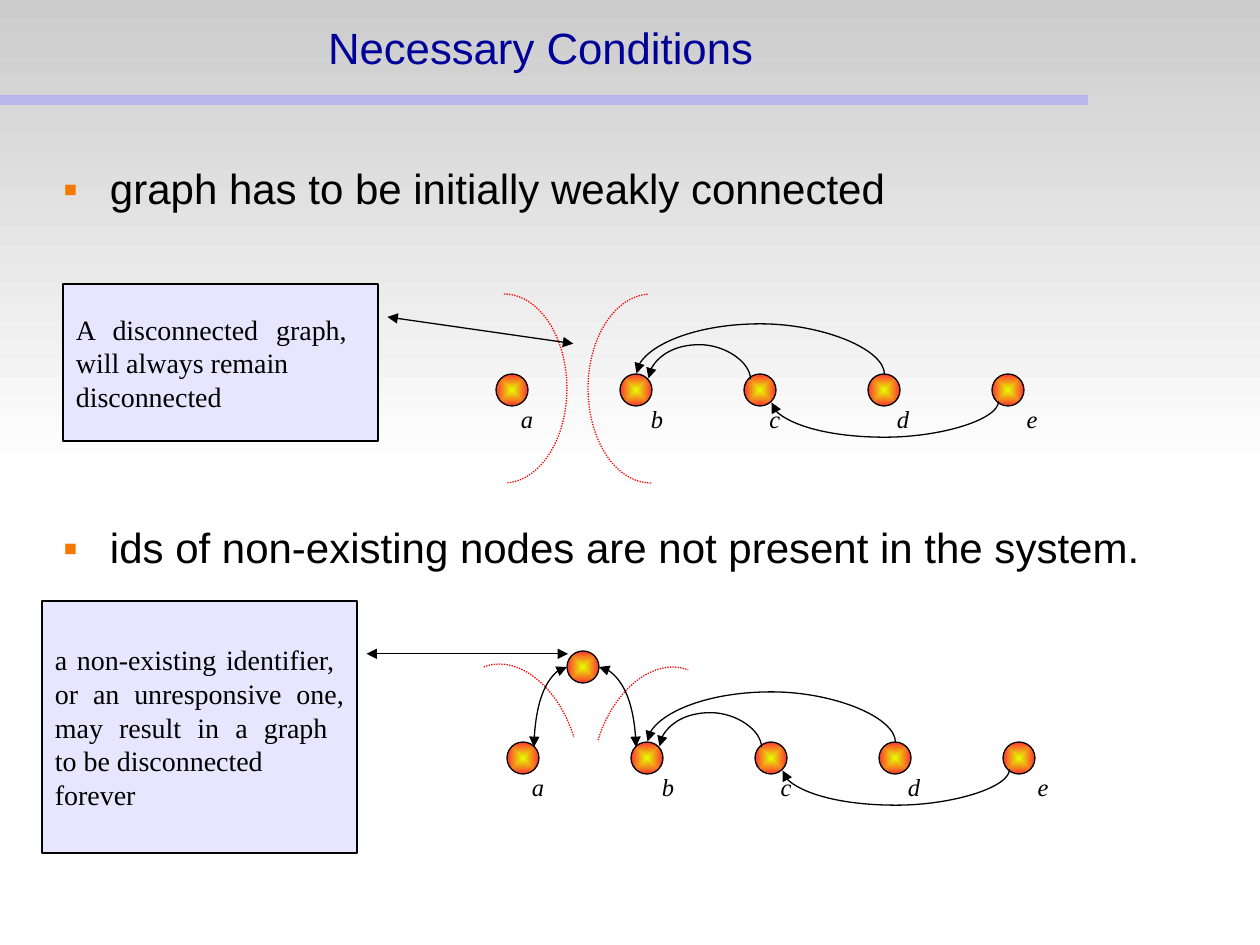
from dataclasses import dataclass

from lxml import etree
from pptx import Presentation
from pptx.dml.color import RGBColor
from pptx.enum.dml import MSO_LINE
from pptx.enum.shapes import MSO_CONNECTOR, MSO_SHAPE
from pptx.enum.text import MSO_ANCHOR, MSO_AUTO_SIZE, PP_ALIGN
from pptx.oxml.ns import qn
from pptx.util import Pt

RECT, OVAL, ARC, CALL = (MSO_SHAPE.RECTANGLE, MSO_SHAPE.OVAL, MSO_SHAPE.ARC,
                         MSO_SHAPE.LINE_CALLOUT_1)
CURVE, DOTS = MSO_CONNECTOR.CURVE, MSO_LINE.ROUND_DOT
MID, TOP = MSO_ANCHOR.MIDDLE, MSO_ANCHOR.TOP
LEFT, CENTER, FULL = PP_ALIGN.LEFT, PP_ALIGN.CENTER, PP_ALIGN.JUSTIFY
FIXED = MSO_AUTO_SIZE.NONE
SCALE = 914400 / 126
STEP, SIZE = 124, 32
HEX = {"ink": "000000", "title": "000099", "mark": "F57900", "bar": "9999FF",
       "note": "E6E6FF", "cut": "FF0000", "core": "E6FF00", "rim": "FF3333",
       "sky": "CCCCCC", "white": "FFFFFF"}
HEAD = {"name": "Arial", "size": Pt(25), "bold": False}
BODY = {"name": "Arial", "size": Pt(24)}
NOTE = {"name": "Times New Roman", "size": Pt(16)}
TAG = {"name": "Times New Roman", "size": Pt(14), "italic": True}


@dataclass
class Label:
    text: str
    shift: int


@dataclass
class Arch:
    start: int
    end: int
    rise: int
    bulge: int
    up: bool


@dataclass
class Cut:
    x: int
    y: int
    turn: float
    span: tuple[float, float]


@dataclass
class Note:
    box: tuple[int, int, int, int]
    tip: tuple[float, float, float, float]
    lines: list[str]


LABELS = [Label("a", 15), Label("b", 21), Label("c", 15), Label("d", 19), Label("e", 24)]
ARCHES = [Arch(486, 259, 12, 36, False), Arch(372, 124, -16, 51, True),
          Arch(238, 136, -11, 35, True)]
ROWS = [(512, 390), (523, 758)]
CUTS = [Cut(441, 294, 0, (162, 53.17)), Cut(588, 294, 180, (162, 53.17)),
        Cut(451, 662, 343.5, (160.73, 215.21)), Cut(595, 665, 16.5, (108.79, 163.27))]
NOTES = [
    Note((63, 284, 315, 157), (0.21, 1.03, 0.38, 1.62),
         ["A disconnected graph, \vwill always remain ", "disconnected"]),
    Note((42, 601, 315, 252), (0.21, 1.03, 0.21, 1.67),
         ["a non-existing identifier, \vor an unresponsive one,\v"
          "may result in a graph \vto be disconnected ", "forever"]),
]
POINTS = ["graph has to be initially weakly connected",
          "ids of non-existing nodes are not present in the system."]


def px(*vals: float) -> list[int]:
    return [round(val * SCALE) for val in vals]


def rgb(name: str) -> RGBColor:
    return RGBColor.from_string(HEX[name])


def sub(node, tag: str, **vals):
    return etree.SubElement(node, qn(tag), {key: str(val) for key, val in vals.items()})


def put(item, vals: dict) -> None:
    for key, val in vals.items():
        setattr(item, key, val)


def write(shape, lines: list[str], look: dict, tone: str, align, anchor, pad: tuple,
          wrap: bool) -> list:
    frame = shape.text_frame
    side, edge = px(*pad)
    put(frame, {"margin_left": side, "margin_right": side, "margin_top": edge,
                "margin_bottom": edge, "word_wrap": wrap, "vertical_anchor": anchor,
                "auto_size": FIXED})
    frame.text = lines[0]
    for line in lines[1:]:
        frame.add_paragraph().text = line
    for para in frame.paragraphs:
        para.alignment = align
        for run in para.runs:
            put(run.font, look)
            run.font.color.rgb = rgb(tone)
    return list(frame.paragraphs)


def stroke(shape, tone: str, ends: tuple = ()) -> None:
    shape.line.color.rgb = rgb(tone)
    shape.line.width = Pt(0.75)
    line = shape._element.spPr.find(qn("a:ln"))
    for tag in ends:
        sub(line, tag, type="triangle")


def draw(slide, kind, box: tuple, fill: str = ""):
    shape = slide.shapes.add_shape(kind, *px(*box))
    shape.shadow.inherit = False
    if fill:
        shape.fill.solid()
        shape.fill.fore_color.rgb = rgb(fill)
    else:
        shape.fill.background()
    return shape


def blend(shape, first: str, last: str) -> None:
    shape.fill.gradient()
    for stop, tone in zip(shape.fill.gradient_stops, (first, last)):
        stop.color.rgb = rgb(tone)
    shape.fill.gradient_angle = 270


def dot(slide, x: int, y: int) -> None:
    shape = draw(slide, OVAL, (x - SIZE // 2, y - SIZE // 2, SIZE, SIZE))
    blend(shape, "core", "rim")
    grad = shape._element.spPr.find(qn("a:gradFill"))
    grad.remove(grad.find(qn("a:lin")))
    way = sub(grad, "a:path", path="shape")
    sub(way, "a:fillToRect", l=50000, t=50000, r=50000, b=50000)
    stroke(shape, "ink")


def bend(slide, ends: tuple, heads: tuple):
    wire = slide.shapes.add_connector(CURVE, *px(*ends))
    stroke(wire, "ink", heads)
    sub(wire._element.spPr, "a:effectLst")
    return wire._element.spPr


def arch(slide, x: int, y: int, item: Arch) -> None:
    mid, half = x + (item.start + item.end) / 2, (item.start - item.end) / 2
    base = y + item.rise
    props = bend(slide, (mid, base - half, mid + 1, base + half), ("a:tailEnd",))
    props.xfrm.set("rot", str((270 if item.up else 90) * 60000))
    if item.up:
        props.xfrm.set("flipV", "1")
    rule = props.find(qn("a:prstGeom")).get_or_add_avLst()
    sub(rule, "a:gd", name="adj1", fmla=f"val {item.bulge * 100000}")


def graph(slide, x: int, y: int) -> None:
    for col, label in enumerate(LABELS):
        mid = x + col * STEP
        box = slide.shapes.add_textbox(*px(mid + label.shift - 19, y + 8, 38, 43))
        write(box, [label.text], TAG, "ink", CENTER, TOP, (13, 6), False)
        dot(slide, mid, y)
    for item in ARCHES:
        arch(slide, x, y, item)


def cut(slide, item: Cut) -> None:
    shape = draw(slide, ARC, (item.x, item.y, 126, 189))
    shape.rotation = item.turn
    shape.adjustments[0], shape.adjustments[1] = item.span
    stroke(shape, "cut")
    shape.line.dash_style = DOTS


def note(slide, item: Note) -> None:
    shape = draw(slide, CALL, item.box, "note")
    for spot, val in enumerate(item.tip):
        shape.adjustments[spot] = val
    stroke(shape, "ink", ("a:headEnd", "a:tailEnd"))
    write(shape, item.lines, NOTE, "ink", FULL, MID, (13, 6), False)


def place(shape, box: tuple) -> None:
    put(shape, dict(zip(("left", "top", "width", "height"), px(*box))))


def back(slide) -> None:
    sky = draw(slide, RECT, (0, 0, 1260, 472))
    blend(sky, "sky", "white")
    bar = draw(slide, RECT, (0, 95, 1088, 10), "bar")
    sub(next(bar._element.spPr.iter(qn("a:srgbClr"))), "a:alpha", val=50000)
    for spot, shape in enumerate((sky, bar)):
        shape.line.fill.background()
        slide.shapes._spTree.insert(2 + spot, shape._element)


def words(slide) -> None:
    title, body = slide.placeholders
    place(title, (0, 0, 1081, 95))
    write(title, ["Necessary Conditions"], HEAD, "title", CENTER, MID, (0, 0), True)
    place(body, (63, 164, 1134, 697))
    paras = write(body, POINTS, BODY, "ink", LEFT, TOP, (0, 2), True)
    for para, gap in zip(paras, (0, 163.6)):
        put(para, {"line_spacing": 0.95, "space_before": Pt(gap), "space_after": Pt(14.2)})
        props = para._p.get_or_add_pPr()
        put(props, {})
        props.set("marL", str(px(47)[0]))
        props.set("indent", str(px(-47)[0]))
        sub(sub(props, "a:buClr"), "a:srgbClr", val=HEX["mark"])
        sub(props, "a:buChar", char="▪")


def main() -> None:
    deck = Presentation()
    deck.slide_width, deck.slide_height = px(1260, 945)
    slide = deck.slides.add_slide(deck.slide_layouts[1])
    back(slide)
    words(slide)
    for x, y in ROWS:
        graph(slide, x, y)
    for item in CUTS:
        cut(slide, item)
    for item in NOTES:
        note(slide, item)
    dot(slide, 583, 667)
    for ends in ((599, 667, 636, 747), (567, 667, 534, 747)):
        props = bend(slide, ends, ("a:headEnd", "a:tailEnd"))
        props.find(qn("a:prstGeom")).set("prst", "curvedConnector2")
    deck.save("out.pptx")


if __name__ == "__main__":
    main()
